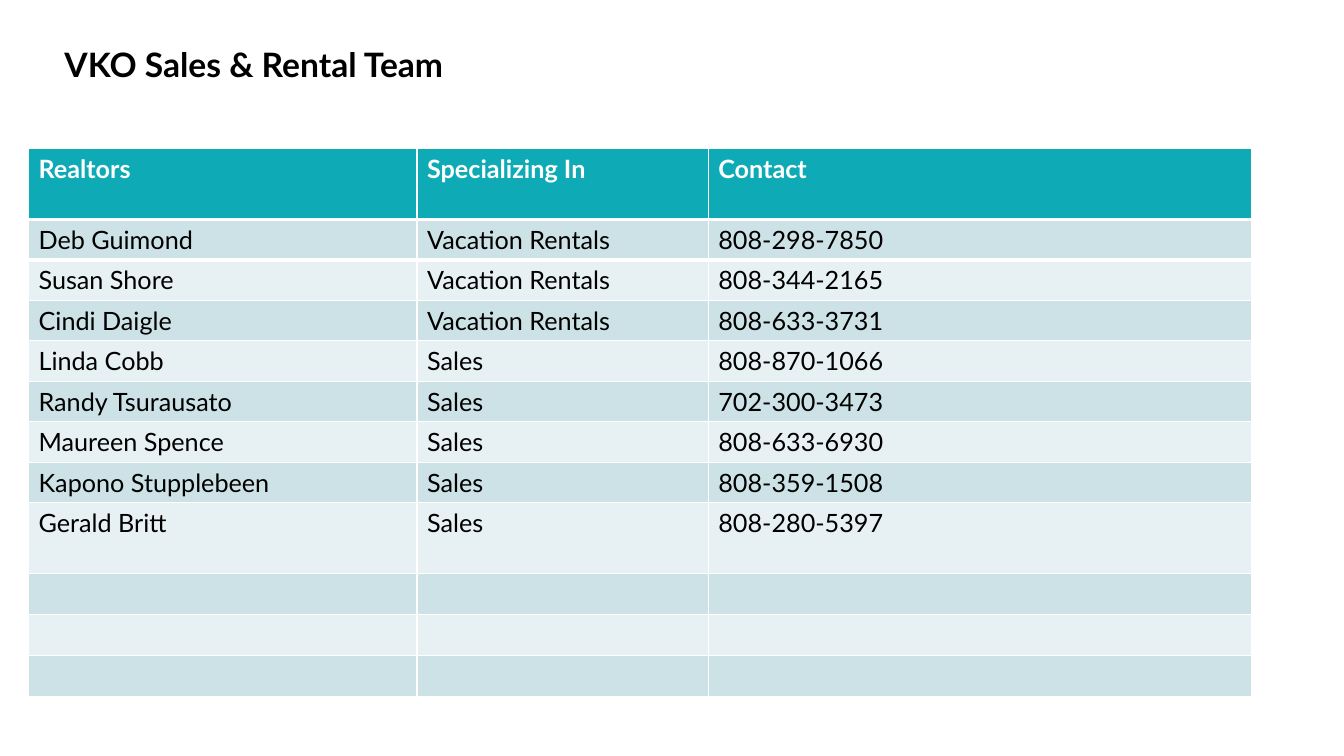
from lxml import etree
from pptx import Presentation
from pptx.dml.color import RGBColor
from pptx.enum.text import MSO_ANCHOR, PP_ALIGN
from pptx.oxml.ns import qn
from pptx.util import Cm, Pt

TITLE = "VKO Sales & Rental Team"
HEADS = ("Realtors", "Specializing In", "Contact")
TEAM = [
    ("Deb Guimond", "Vacation Rentals", "808-298-7850"),
    ("Susan Shore", "Vacation Rentals", "808-344-2165"),
    ("Cindi Daigle", "Vacation Rentals", "808-633-3731"),
    ("Linda Cobb", "Sales", "808-870-1066"),
    ("Randy Tsurausato", "Sales", "702-300-3473"),
    ("Maureen Spence", "Sales", "808-633-6930"),
    ("Kapono Stupplebeen", "Sales", "808-359-1508"),
    ("Gerald Britt", "Sales", "808-280-5397"),
]
SPARE = [("", "", "")] * 3
ROWS = [HEADS] + TEAM + SPARE

FONT = "Lato"
BLACK = RGBColor(0x00, 0x00, 0x00)
WHITE = RGBColor(0xFF, 0xFF, 0xFF)
TEAL = RGBColor(0x0E, 0xAB, 0xB7)
BANDS = (RGBColor(0xE7, 0xF1, 0xF3), RGBColor(0xCC, 0xE2, 0xE6))
LEFT, MIDDLE = PP_ALIGN.LEFT, MSO_ANCHOR.MIDDLE

WIDTHS = (Cm(9.79), Cm(7.34), Cm(13.68))
LOW, TALL = Cm(1.02), Cm(1.79)
TALL_ROWS = (0, len(TEAM))


def write(frame, text, size, color, bold):
    """Add one formatted run to the first paragraph of a text frame."""
    para = frame.paragraphs[0]
    para.alignment = LEFT
    run = para.add_run()
    run.text = text
    font = run.font
    font.name, font.size, font.bold = FONT, Pt(size), bold
    font.color.rgb = color
    return para


def rule(cell, side, width):
    """Draw a white border on one side of a cell."""
    props = cell._tc.get_or_add_tcPr()
    line = etree.Element(qn("a:" + side), w=str(Pt(width)))
    fill = etree.SubElement(line, qn("a:solidFill"))
    etree.SubElement(fill, qn("a:srgbClr"), val=str(WHITE))
    props.insert(0, line)


def add_title(slide):
    """Place and fill the title placeholder."""
    title = slide.shapes.title
    title.left, title.top = Cm(1.37), Cm(0.86)
    title.width, title.height = Cm(14.55), Cm(1.63)
    frame = title.text_frame
    frame.vertical_anchor = MIDDLE
    write(frame, TITLE, 24, BLACK, True).line_spacing = 0.9


def add_team(slide):
    """Build the banded team table."""
    heights = [TALL if i in TALL_ROWS else LOW for i in range(len(ROWS))]
    table = slide.shapes.add_table(
        len(ROWS), len(HEADS), Cm(0.72), Cm(3.74), sum(WIDTHS), sum(heights)
    ).table
    for col, width in zip(table.columns, WIDTHS):
        col.width = width
    for i, (row, height) in enumerate(zip(table.rows, heights)):
        row.height = height
        head = i == 0
        for cell, text in zip(row.cells, ROWS[i]):
            cell.fill.solid()
            cell.fill.fore_color.rgb = TEAL if head else BANDS[i % 2]
            if head:
                rule(cell, "lnB", 3)
            if i == 1:
                rule(cell, "lnT", 3)
            if text:
                write(cell.text_frame, text, 18, WHITE if head else BLACK, head)


def main():
    """Create the slide and save it."""
    deck = Presentation()
    deck.slide_width, deck.slide_height = Cm(33.87), Cm(19.05)
    slide = deck.slides.add_slide(deck.slide_layouts[5])
    add_title(slide)
    add_team(slide)
    deck.save("out.pptx")


if __name__ == "__main__":
    main()
